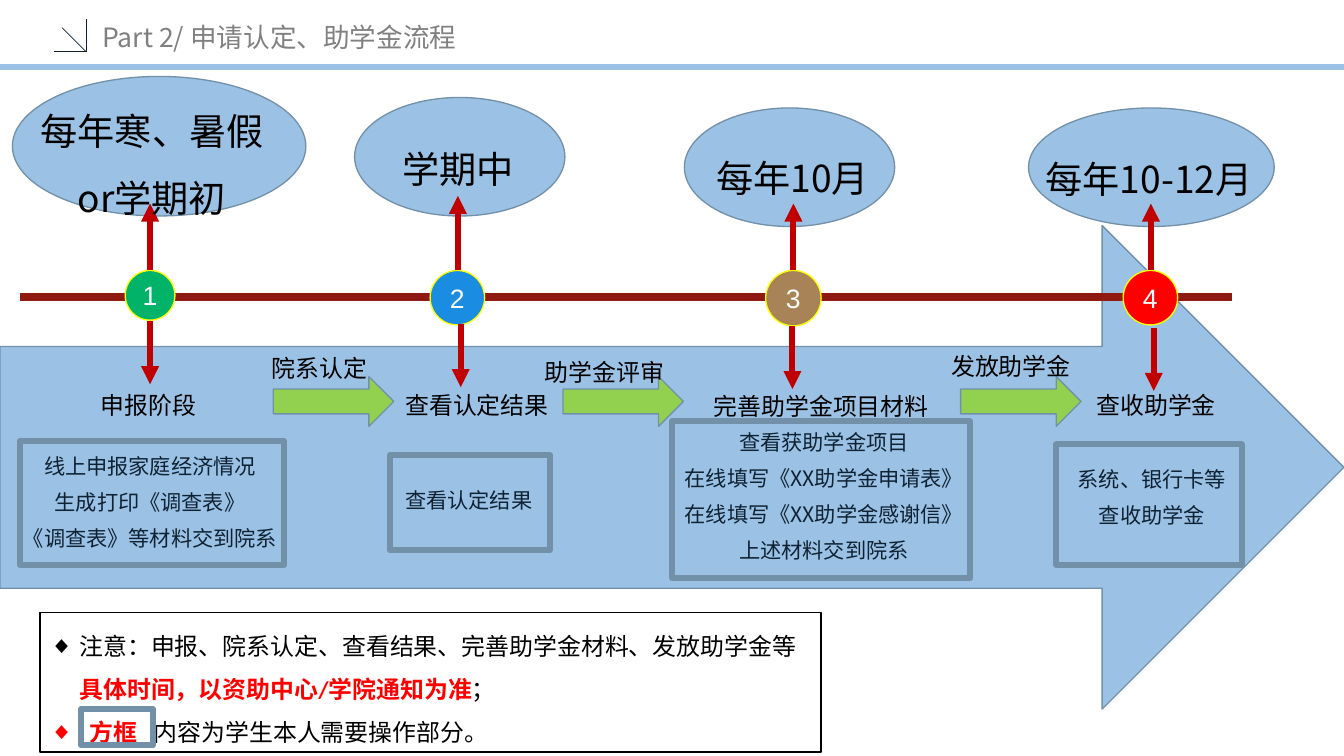
"""Build the slide on the grant application process."""
from dataclasses import dataclass
from typing import NamedTuple

from lxml.etree import SubElement
from pptx import Presentation
from pptx.dml.color import RGBColor
from pptx.enum.shapes import MSO_CONNECTOR, MSO_SHAPE as SHAPE
from pptx.enum.text import MSO_ANCHOR as ANCHOR, MSO_AUTO_SIZE, PP_ALIGN as ALIGN
from pptx.oxml.ns import qn
from pptx.util import Inches, Pt

CJK = "Noto Sans CJK SC"
BLUE, EDGE, NAVY, RED = "9BC2E5", "7390A9", "0E2234", "C00000"
CIRCLE_TOP = 2.83
DOWN_LENGTH = 0.66


class Box(NamedTuple):
    left: float
    top: float
    width: float
    height: float


@dataclass
class Span:
    text: str
    color: str = "000000"
    bold: bool = False
    spacing: int = 0


@dataclass
class Step:
    color: str
    circle_left: float
    diameter: float
    oval: Box
    when: list[str]
    when_box: Box
    up: tuple[float, float]
    down: tuple[float, float]
    stage: str
    stage_box: Box
    frame: Box
    tasks: list[str]
    task_box: Box


@dataclass
class Transition:
    left: float
    label: str
    label_box: Box


STEPS = [
    Step("00B369", 1.31, 0.52, Box(0.13, 0.8, 3.07, 1.46),
         ["每年寒、暑假", "or学期初"], Box(0.08, 0.85, 3.02, 1.43),
         (1.57, 2.13), (1.57, 3.36), "申报阶段", Box(0.77, 4.04, 1.57, 0.4),
         Box(0.21, 4.61, 2.76, 1.3),
         ["线上申报家庭经济情况", "生成打印《调查表》", "《调查表》等材料交到院系"],
         Box(0, 4.72, 3.14, 1.19)),
    Step("1A8CE1", 4.5, 0.57, Box(3.71, 1.02, 2.2, 1.24),
         ["学期中"], Box(3.28, 1.25, 3.02, 0.72),
         (4.79, 2.05), (4.82, 3.39), "查看认定结果", Box(4.07, 4.04, 1.84, 0.4),
         Box(4.08, 4.76, 1.67, 1), ["查看认定结果"], Box(4.07, 5.08, 1.67, 0.43)),
    Step("A78357", 8.01, 0.58, Box(7.16, 1.13, 2.2, 1.24),
         ["每年10月"], Box(6.78, 1.34, 3.02, 0.72),
         (8.3, 2.13), (8.29, 3.41), "完善助学金项目材料", Box(7.35, 4.05, 2.48, 0.4),
         Box(7.03, 4.41, 3.12, 1.64),
         ["查看获助学金项目", "在线填写《XX助学金申请表》",
          "在线填写《XX助学金感谢信》", "上述材料交到院系"],
         Box(7.04, 4.47, 3.16, 1.12)),
    Step("FF0000", 11.75, 0.57, Box(10.76, 1.13, 2.57, 1.24),
         ["每年10-12月"], Box(10.51, 1.35, 3.02, 0.72),
         (12.04, 2.13), (12.07, 3.43), "查收助学金", Box(11.31, 4.04, 1.57, 0.4),
         Box(11.05, 4.65, 1.94, 1.26),
         ["系统、银行卡等", "查收助学金"], Box(11.13, 4.86, 1.84, 0.87)),
]

TRANSITIONS = [
    Transition(2.86, "院系认定", Box(2.72, 3.5, 1.24, 0.5)),
    Transition(5.89, "助学金评审", Box(5.54, 3.54, 1.57, 0.56)),
    Transition(10.05, "发放助学金", Box(9.79, 3.48, 1.57, 0.5)),
]

NOTES = [
    (0.31, [Span("注意：申报、院系认定、查看结果、完善助学金材料、发放助学金等"),
            Span("具体时间，以资助中心/学院通知为准", "FF0000", True), Span("；")]),
    (0.42, [Span("方框", "FF0000", True), Span(" ", spacing=800),
            Span("内容为学生本人需要操作部分。")]),
]


def rgb(color: str) -> RGBColor:
    return RGBColor.from_string(color)


def place(sp, box: Box) -> None:
    for name, value in box._asdict().items():
        setattr(sp, name, Inches(value))


def add_run(p, span: Span, size: float, font: str = CJK) -> None:
    r = p.add_run()
    r.text = span.text
    for name, value in {"size": Pt(size), "name": font, "bold": span.bold}.items():
        setattr(r.font, name, value)
    r.font.color.rgb = rgb(span.color)
    rpr = r._r.get_or_add_rPr()
    SubElement(rpr, qn("a:ea")).set("typeface", CJK)
    if span.spacing:
        rpr.set("spc", str(span.spacing))


def write(tf, lines: list[str], size: float, color: str = "000000",
          font: str = CJK, **fmt) -> None:
    tf.word_wrap = True
    for i, line in enumerate(lines):
        p = tf.paragraphs[0] if i == 0 else tf.add_paragraph()
        for name, value in {"alignment": ALIGN.CENTER, **fmt}.items():
            setattr(p, name, value)
        add_run(p, Span(line, color), size, font)


def add_text(s, box: Box, lines: list[str], size: float, color: str = "000000", **fmt) -> None:
    write(s.shapes.add_textbox(*map(Inches, box)).text_frame, lines, size, color, **fmt)


def outline(sp, color: str, width: float) -> None:
    sp.line.color.rgb = rgb(color)
    sp.line.width = Pt(width)


def add_shape(s, kind: SHAPE, box: Box, fill: str = "", edge: str = EDGE, width: float = 1):
    sp = s.shapes.add_shape(kind, *map(Inches, box))
    sp.shadow.inherit = False
    if fill:
        sp.fill.solid()
        sp.fill.fore_color.rgb = rgb(fill)
    else:
        sp.fill.background()
    outline(sp, edge, width)
    return sp


def add_line(s, x1: float, y1: float, x2: float, y2: float,
             color: str, width: float, arrow: bool = False) -> None:
    c = s.shapes.add_connector(MSO_CONNECTOR.STRAIGHT, *map(Inches, (x1, y1, x2, y2)))
    outline(c, color, width)
    if arrow:
        SubElement(c.line._get_or_add_ln(), qn("a:tailEnd")).set("type", "triangle")
    SubElement(c._element.spPr, qn("a:effectLst"))


def add_title(s) -> None:
    title = s.shapes.title
    place(title, Box(0.97, 0.15, 4.11, 0.47))
    tf = title.text_frame
    tf.auto_size = MSO_AUTO_SIZE.NONE
    tf.vertical_anchor = ANCHOR.MIDDLE
    write(tf, ["Part 2/ 申请认定、助学金流程"], 20, "808080", alignment=ALIGN.LEFT)


def add_notes_list(s) -> None:
    body = s.placeholders[1]
    place(body, Box(0.42, 6.41, 8.17, 1.46))
    outline(body, "000000", 1)
    tf = body.text_frame
    tf.auto_size = MSO_AUTO_SIZE.NONE
    for i, (indent, spans) in enumerate(NOTES):
        p = tf.paragraphs[0] if i == 0 else tf.add_paragraph()
        for name, value in {"line_spacing": 1.5, "space_before": Pt(0)}.items():
            setattr(p, name, value)
        ppr = p._p.get_or_add_pPr()
        ppr.set("marL", str(Inches(indent)))
        ppr.set("indent", str(-Inches(indent)))
        SubElement(ppr, qn("a:buChar")).set("char", "◆")
        for span in spans:
            add_run(p, span, 18, "Calibri")
    add_shape(s, SHAPE.RECTANGLE, Box(0.85, 7.42, 0.75, 0.38), width=4.5)


def add_step(s, number: int, step: Step) -> None:
    circle = add_shape(s, SHAPE.OVAL, Box(step.circle_left, CIRCLE_TOP, step.diameter, step.diameter),
                       step.color, "FFFF00")
    circle.text_frame.vertical_anchor = ANCHOR.MIDDLE
    write(circle.text_frame, [str(number)], 20, "FFFFFF", "Arial")
    add_shape(s, SHAPE.RECTANGLE, step.frame, width=4.5)
    add_text(s, step.task_box, step.tasks, 16, NAVY, line_spacing=0.9, space_before=Pt(10))
    add_text(s, step.stage_box, [step.stage], 18)
    (up_x, up_y), (down_x, down_y) = step.up, step.down
    add_line(s, up_x, CIRCLE_TOP, up_x, up_y, RED, 4.5, True)
    add_line(s, down_x, down_y, down_x, down_y + DOWN_LENGTH, RED, 4.5, True)
    add_text(s, step.when_box, step.when, 28, line_spacing=1.5)


def main() -> None:
    prs = Presentation()
    prs.slide_width, prs.slide_height = Inches(14.06), Inches(7.91)
    s = prs.slides.add_slide(prs.slide_layouts[1])
    add_title(s)
    add_line(s, 0, 0.7, 14.06, 0.7, BLUE, 4.5)
    for x, y in [(0.57, 0.54), (0.9, 0.2), (0.65, 0.29)]:
        add_line(s, 0.9, 0.54, x, y, NAVY, 0.5)
    for step in STEPS:
        add_shape(s, SHAPE.OVAL, step.oval, BLUE)
    add_shape(s, SHAPE.RIGHT_ARROW, Box(0, 2.36, 14.06, 5.06), BLUE)
    add_line(s, 0.21, 3.11, 12.89, 3.11, "8F1A12", 6)
    for t in TRANSITIONS:
        add_shape(s, SHAPE.RIGHT_ARROW, Box(t.left, 3.94, 1.26, 0.52), "92D050")
        add_text(s, t.label_box, [t.label], 18, line_spacing=1.5)
    for number, step in enumerate(STEPS, 1):
        add_step(s, number, step)
    add_notes_list(s)
    prs.save("out.pptx")


if __name__ == "__main__":
    main()
